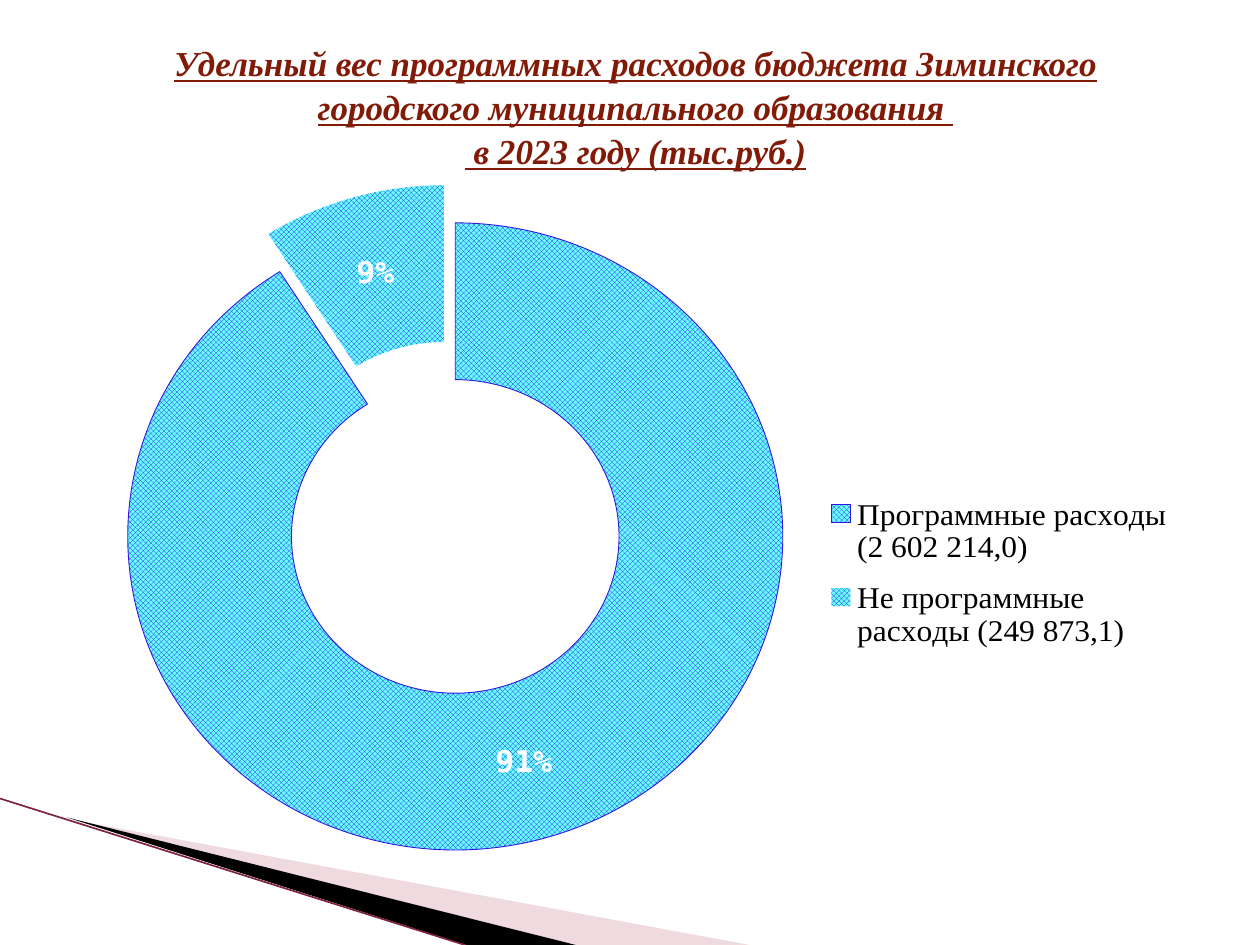
from lxml.etree import SubElement
from pptx import Presentation
from pptx.chart.data import CategoryChartData
from pptx.dml.color import RGBColor
from pptx.enum.chart import XL_CHART_TYPE, XL_LEGEND_POSITION
from pptx.enum.dml import MSO_PATTERN
from pptx.enum.shapes import MSO_CONNECTOR
from pptx.enum.text import MSO_ANCHOR, MSO_AUTO_SIZE, PP_ALIGN
from pptx.oxml import parse_xml
from pptx.oxml.ns import nsdecls, qn
from pptx.util import Inches, Pt

COLORS = {
    "title": "821A08", "pale": "D8A3AF", "black": "000000", "edge": "7F2340",
    "hatch": "3215E1", "ring": "66FFFF", "white": "FFFFFF",
}
SERIF = "Times New Roman"
MONO = "DejaVu Sans Mono"

deck = Presentation()
deck.slide_width, deck.slide_height = Inches(10), Inches(7.5)
page = deck.slides.add_slide(deck.slide_layouts[5])


def style(font, name=SERIF, size=18, color="black", **flags):
    font.name, font.size = name, Pt(size)
    font.color.rgb = RGBColor.from_string(COLORS[color])
    for flag, value in flags.items():
        setattr(font, flag, value)


def place(across, down):
    """Turn shares of the slide's width and height into lengths."""
    return int(deck.slide_width * across), int(deck.slide_height * down)


# Corner wedges
wedges = [
    ("pale", 40, [(0.055, 0.867), (0.595, 1), (0.456, 1)]),
    ("black", 100, [(0.053, 0.865), (0.457, 1), (0.37, 1)]),
]
for color, opacity, corners in wedges:
    points = [place(*corner) for corner in corners]
    builder = page.shapes.build_freeform(*points[0])
    builder.add_line_segments(points[1:], close=True)
    wedge = builder.convert_to_shape()
    wedge.shadow.inherit = False
    wedge.line.fill.background()
    wedge.fill.solid()
    wedge.fill.fore_color.rgb = RGBColor.from_string(COLORS[color])
    if opacity < 100:
        tone = wedge.fill._xPr.find(".//" + qn("a:srgbClr"))
        SubElement(tone, qn("a:alpha"), val=str(opacity * 1000))

edge = page.shapes.add_connector(
    MSO_CONNECTOR.STRAIGHT, *place(0, 0.845), *place(0.369, 1))
edge.line.color.rgb = RGBColor.from_string(COLORS["edge"])
edge.line.width = Pt(0.95)
SubElement(edge._element.spPr, qn("a:effectLst"))

# Title
title = page.shapes.title
title.left, title.top = place(0.083, 0.028)
title.width, title.height = place(0.843, 0.168)
frame = title.text_frame
frame.word_wrap = True
frame.auto_size = MSO_AUTO_SIZE.NONE
frame.vertical_anchor = MSO_ANCHOR.MIDDLE
frame.text = ("Удельный вес программных расходов бюджета Зиминского "
              "городского муниципального образования \n в 2023 году (тыс.руб.)")
for para in frame.paragraphs:
    para.alignment = PP_ALIGN.CENTER
    para.line_spacing = 1.05
    for span in para.runs:
        style(span.font, size=20, color="title",
              bold=True, italic=True, underline=True)

# Doughnut chart
data = CategoryChartData()
data.categories = ["Программные расходы (2 602 214,0)",
                   "Не программные расходы (249 873,1)"]
data.add_series("Series 1", (91, 9))
chart = page.shapes.add_chart(
    XL_CHART_TYPE.DOUGHNUT, *place(0.043, 0.196), *place(0.898, 0.704), data).chart
chart.has_title = False
style(chart.font, name=MONO)
chart.has_legend = True
legend = chart.legend
legend.position = XL_LEGEND_POSITION.RIGHT
legend.include_in_layout = False
style(legend.font)

# Hatched slices: the first outlined, the second pulled out
plot = chart.plots[0]
plot.vary_by_categories = True
ring = plot.series[0]
for index in range(2):
    slice_format = ring.points[index].format
    fill = slice_format.fill
    fill.patterned()
    fill.pattern = MSO_PATTERN.TRELLIS
    fill.fore_color.rgb = RGBColor.from_string(COLORS["hatch"])
    fill.back_color.rgb = RGBColor.from_string(COLORS["ring"])
    if index == 0:
        slice_format.line.color.rgb = RGBColor.from_string(COLORS["hatch"])
        slice_format.line.width = Pt(0.5)
    else:
        slice_format.line.fill.background()
pulled = ring._element.findall(qn("c:dPt"))[1]
pulled.find(qn("c:spPr")).addprevious(
    parse_xml(f'<c:explosion {nsdecls("c")} val="25"/>'))

# Percent labels
plot.has_data_labels = True
labels = plot.data_labels
labels.show_percentage = True
labels.show_value = False
labels.number_format = "0%"
labels.number_format_is_linked = False
style(labels.font, name=MONO, color="white", bold=True)

# Fixed places for the ring and the legend, as shares of the chart
area = chart._chartSpace.chart.plotArea
layouts = [
    (area, None, '<c:layoutTarget val="inner"/>', (0.065, 0.015, 0.579, 0.985)),
    (legend._element, "c:legendPos", "", (0.68, 0.42, 0.31, 0.29)),
]
for parent, before, target, shares in layouts:
    for old in parent.findall(qn("c:layout")):
        parent.remove(old)
    modes = '<c:xMode val="edge"/><c:yMode val="edge"/>'
    sizes = "".join(f'<c:{key} val="{share}"/>' for key, share in zip("xywh", shares))
    layout = parse_xml(f'<c:layout {nsdecls("c")}><c:manualLayout>{target}{modes}{sizes}'
                       '</c:manualLayout></c:layout>')
    if before:
        parent.find(qn(before)).addnext(layout)
    else:
        parent.insert(0, layout)

deck.save("out.pptx")
